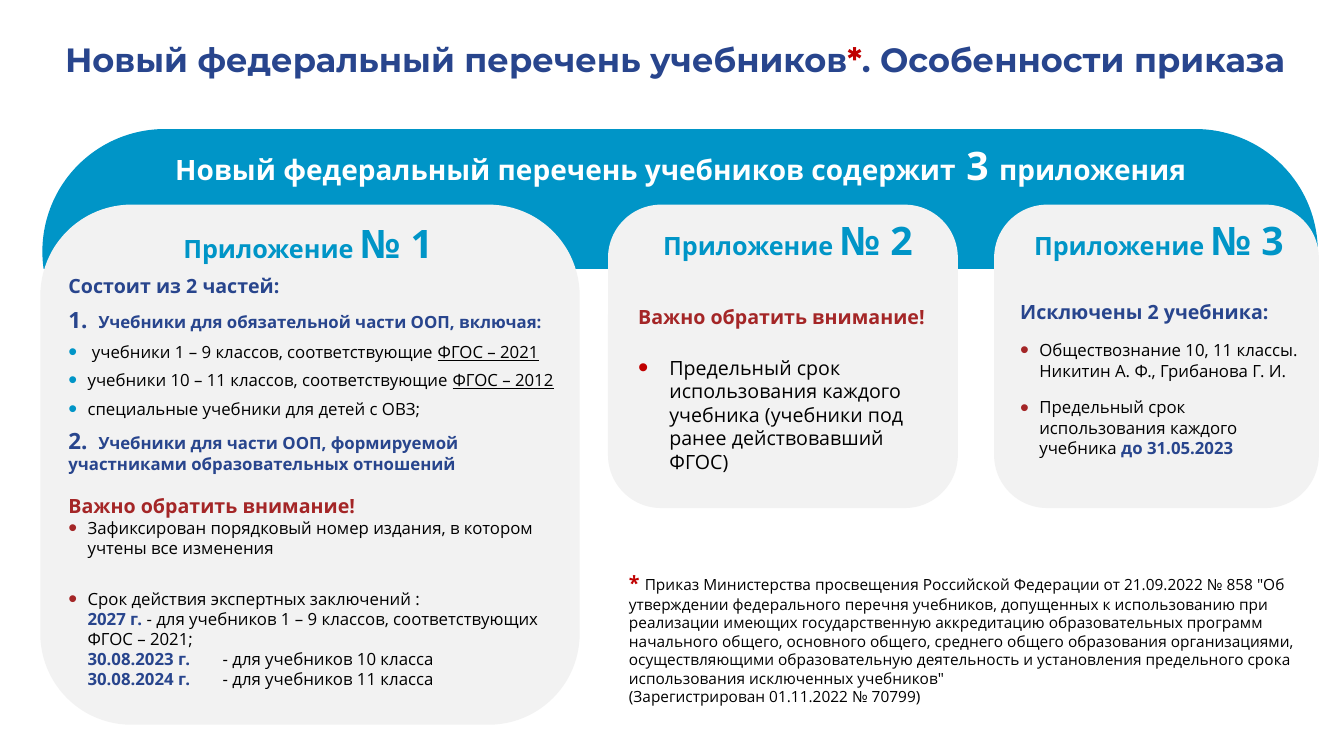
import pptx
import pptx.util
import pptx.dml.color
import pptx.enum.shapes
import pptx.oxml
import pptx.oxml.ns

W, H = 13.33, 7.5
NAVY, BLUE, RED, BRIGHT_RED = "28458D", "0095C7", "A42627", "C00000"
BLACK, WHITE, GREY = "000000", "FFFFFF", "F2F2F2"
SHAPE = pptx.enum.shapes.MSO_SHAPE

prs = pptx.Presentation()
prs.slide_width = pptx.util.Inches(W)
prs.slide_height = pptx.util.Inches(H)
s = prs.slides.add_slide(prs.slide_layouts[6])


def rgb(hex_colour):
    return pptx.dml.color.RGBColor.from_string(hex_colour)


def text(at, paragraphs, font="Open Sans"):
    """Text box at shares of the slide; each paragraph is (runs, options)."""
    tf = s.shapes.add_textbox(*[pptx.util.Inches(v) for v in at]).text_frame
    tf.word_wrap = True
    for i, (runs, options) in enumerate(paragraphs):
        p = tf.paragraphs[0] if i == 0 else tf.add_paragraph()
        p.line_spacing = options.get("line", 1.0)
        p.space_before = pptx.util.Pt(options.get("before", 0))
        p.space_after = pptx.util.Pt(options.get("after", 0))
        pPr = p._p.get_or_add_pPr()
        indent = pptx.util.Inches(options.get("indent", 0))
        pPr.set("marL", str(indent))
        xml = ""
        if "bullet" in options:
            pPr.set("indent", str(-indent))
            xml += (f'<a:buClr><a:srgbClr val="{options["bullet"]}"/></a:buClr>'
                    '<a:buSzPct val="150000"/><a:buFont typeface="Arial"/><a:buChar char="•"/>')
        if "tab" in options:
            xml += f'<a:tabLst><a:tab pos="{pptx.util.Inches(options["tab"])}" algn="l"/></a:tabLst>'
        ns = pptx.oxml.ns.nsdecls("a")
        for child in list(pptx.oxml.parse_xml(f"<a:pPr {ns}>{xml}</a:pPr>")):
            pPr.append(child)
        for words, size, colour, style in runs:
            r = p.add_run()
            r.text = words
            r.font.name = font
            r.font.size = pptx.util.Pt(size)
            r.font.color.rgb = rgb(colour)
            r.font.bold = "b" in style
            r.font.underline = "u" in style


# Banner, its flat lower edge, and the three cards: shares of the slide in percent
CARD_TOP = 27.07
for x, y, w, h, fill, radius in [
    (3.15, 17.07, 94.9, 32.4, BLUE, 0.5),
    (3, 35.6, 97, 27.47, WHITE, 0),
    (3, CARD_TOP, 40.13, 68.8, GREY, 0.175),
    (45.24, CARD_TOP, 26.03, 40.13, GREY, 0.175),
    (73.97, CARD_TOP, 24.16, 40.13, GREY, 0.175),
]:
    sp = s.shapes.add_shape(
        SHAPE.ROUNDED_RECTANGLE if radius else SHAPE.RECTANGLE,
        *[pptx.util.Inches(v / 100) for v in (x * W, y * H, w * W, h * H)])
    if radius:
        sp.adjustments[0] = radius
    sp.shadow.inherit = False
    sp.fill.solid()
    sp.fill.fore_color.rgb = rgb(fill)
    sp.line.fill.background()

# Title and banner heading
text((0.041 * W, 0.053 * H, 0.953 * W, 0.059 * H), [
    ([("Новый федеральный перечень учебников", 24, NAVY, "b"),
      ("*", 24, BRIGHT_RED, "b"),
      (". Особенности приказа", 24, NAVY, "b")], {"line": 0.85}),
], font="Montserrat")
text((0.123 * W, 0.18 * H, 0.829 * W, 0.076 * H), [
    ([("Новый федеральный перечень учебников содержит", 20, WHITE, "b"),
      (" 3 ", 28, WHITE, "b"),
      ("приложения", 20, WHITE, "b")], {"after": 6}),
])

# Card headings
for number, (x, y) in enumerate([(0.129, 0.283), (0.486, 0.28), (0.762, 0.28)], 1):
    text((x * W, y * H, 0.225 * W, 0.076 * H), [
        ([("Приложение ", 18, BLUE, "b"), (f"№ {number}", 28, BLUE, "b")], {}),
    ])

# Card 1
numbered = {"after": 6, "tab": 0.3}
part = {"after": 6, "indent": 0.19, "bullet": BLUE}
notice = {"indent": 0.19, "bullet": RED}
term = {"indent": 0.19, "tab": 1.34}
text((0.0435 * W, 0.356 * H, 0.388 * W, 0.595 * H), [
    ([("Состоит из 2 частей:", 14, NAVY, "b")], {"after": 6}),
    ([("1.\t", 16, NAVY, "b"),
      ("Учебники для обязательной части ООП, включая:", 12, NAVY, "b")], numbered),
    ([(" учебники 1 – 9 классов, соответствующие ", 12, BLACK, ""),
      ("ФГОС – 2021", 12, BLACK, "u")], part),
    ([("учебники 10 – 11 классов, соответствующие ", 12, BLACK, ""),
      ("ФГОС – 2012", 12, BLACK, "u")], part),
    ([("специальные учебники для детей с ОВЗ;", 12, BLACK, "")], part),
    ([("2.\t", 16, NAVY, "b"),
      ("Учебники для части ООП, формируемой участниками образовательных отношений",
       12, NAVY, "b")], numbered),
    ([("Важно обратить внимание!", 14, RED, "b")], {"line": 1.5}),
    ([("Зафиксирован порядковый номер издания, в котором учтены все изменения",
       12, BLACK, "")], notice),
    ([("Срок действия экспертных заключений :", 12, BLACK, "")],
     {**notice, "line": 1.5, "before": 14.4}),
    ([("2027 г. ", 12, NAVY, "b"),
      ("- для учебников 1 – 9 классов, соответствующих ФГОС – 2021;", 12, BLACK, "")], term),
    ([("30.08.2023 г.\t", 12, NAVY, "b"), ("- для учебников 10 класса", 12, BLACK, "")], term),
    ([("30.08.2024 г.\t", 12, NAVY, "b"), ("- для учебников 11 класса", 12, BLACK, "")], term),
])

# Card 2
text((0.4674 * W, 0.397 * H, 0.2326 * W, 0.265 * H), [
    ([("Важно обратить внимание!", 14, RED, "b")], {}),
    ([("Предельный срок использования каждого учебника (учебники под ранее действовавший ФГОС)",
       14, BLACK, "")], {"before": 19.2, "indent": 0.31, "bullet": BRIGHT_RED}),
])

# Card 3
excluded = {**notice, "after": 12}
text((0.7517 * W, 0.39 * H, 0.2266 * W, 0.227 * H), [
    ([("Исключены 2 учебника:", 14, NAVY, "b")], {"after": 12}),
    ([("Обществознание 10, 11 классы. Никитин А. Ф., Грибанова Г. И.", 12, BLACK, "")], excluded),
    ([("Предельный срок использования каждого учебника ", 12, BLACK, ""),
      ("до 31.05.2023", 12, NAVY, "b")], excluded),
])

# Footnote
text((0.4606 * W, 0.749 * H, 0.5364 * W, 0.193 * H), [
    ([("* ", 14, BRIGHT_RED, "b"),
      ("Приказ Министерства просвещения Российской Федерации от 21.09.2022 № 858 "
       "\"Об утверждении федерального перечня учебников, допущенных к использованию при "
       "реализации имеющих государственную аккредитацию образовательных программ начального "
       "общего, основного общего, среднего общего образования организациями, осуществляющими "
       "образовательную деятельность и установления предельного срока использования "
       "исключенных учебников\"", 11, BLACK, "")], {}),
    ([("(Зарегистрирован 01.11.2022 № 70799)", 11, BLACK, "")], {}),
])

prs.save("out.pptx")
